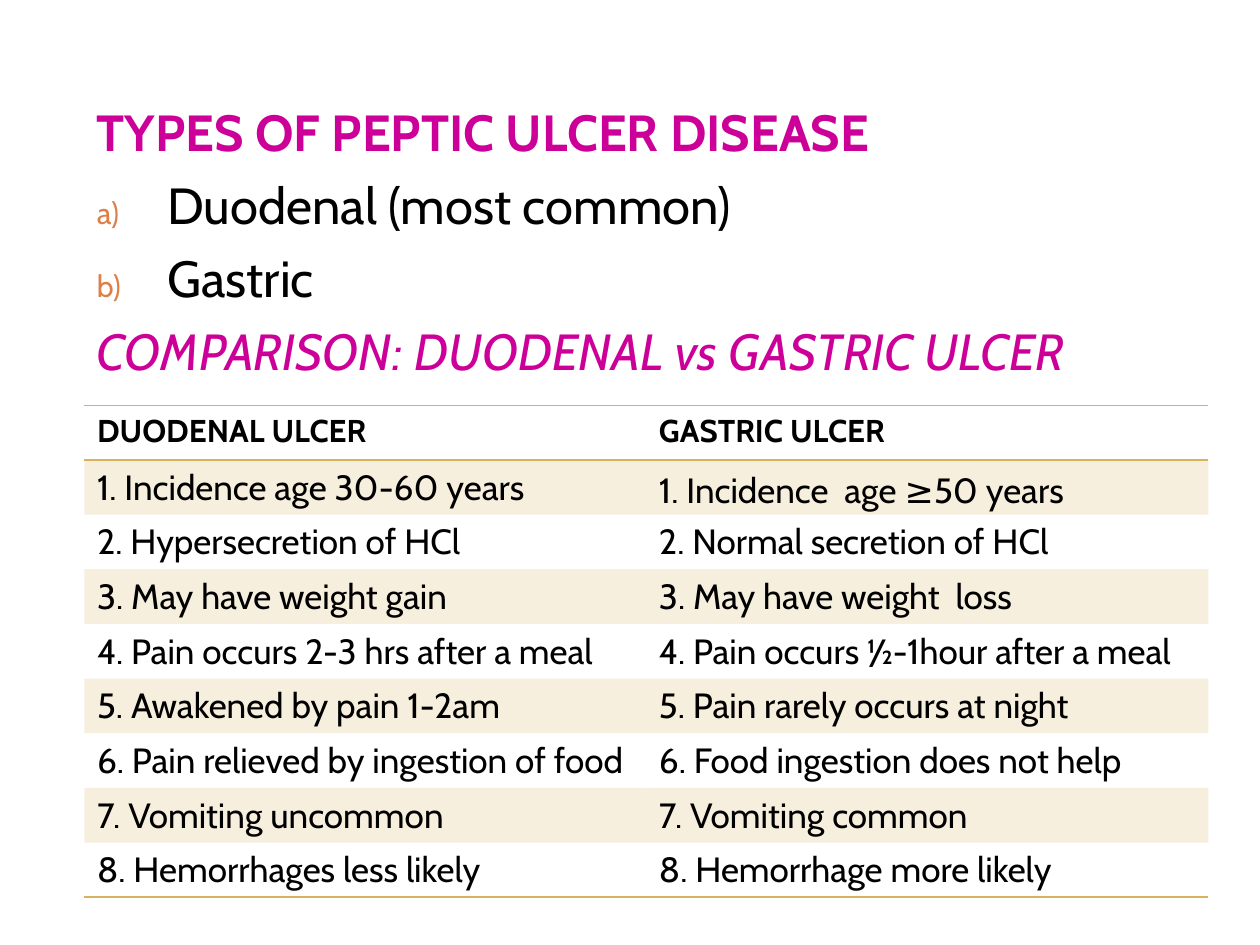
from pptx import Presentation
from pptx.dml.color import RGBColor
from pptx.oxml.ns import qn
from pptx.util import Inches, Pt
from lxml.etree import SubElement

PINK, BLACK, GOLD, RUST = "CC0099", "000000", "D8B25C", "DD8047"
FONT = "Cabin"
LINES = [
    ("TYPES OF PEPTIC ULCER DISEASE", PINK, True, False, False),
    ("Duodenal (most common)", BLACK, False, False, True),
    ("Gastric", BLACK, False, False, True),
    ("COMPARISON: DUODENAL vs GASTRIC ULCER", PINK, False, True, False),
]
ROWS = [
    ("DUODENAL ULCER", "GASTRIC ULCER"),
    ("1. Incidence age 30-60 years", "1. Incidence  age ≥50 years"),
    ("2. Hypersecretion of HCl", "2. Normal secretion of HCl"),
    ("3. May have weight gain", "3. May have weight  loss"),
    ("4. Pain occurs 2-3 hrs after a meal", "4. Pain occurs ½-1hour after a meal"),
    ("5. Awakened by pain 1-2am", "5. Pain rarely occurs at night"),
    ("6. Pain relieved by ingestion of food", "6. Food ingestion does not help"),
    ("7. Vomiting uncommon", "7. Vomiting common"),
    ("8. Hemorrhages less likely", "8. Hemorrhage more likely"),
]
LEFT, WIDTH, ROW = Inches(0.67), Inches(8.92), Inches(0.43)
PLAIN = "{2D5ABB26-0587-4C30-8999-92F81FD0307C}"


def paint(hue):
    return RGBColor.from_string(hue)


def add_run(para, text, size, hue, bold=False, slant=False, face=FONT):
    run = para.add_run()
    run.text = text
    font = run.font
    font.name, font.size, font.bold, font.italic = face, Pt(size), bold, slant
    font.color.rgb = paint(hue)


def letter(para):
    props = para._p.get_or_add_pPr()
    props.set("marL", str(Inches(0.56)))
    props.set("indent", str(-Inches(0.56)))
    SubElement(SubElement(props, qn("a:buClr")), qn("a:srgbClr"), val=RUST)
    SubElement(props, qn("a:buSzPct"), val="60000")
    SubElement(props, qn("a:buFont"), typeface=FONT)
    SubElement(props, qn("a:buAutoNum"), type="alphaLcParenR")


def edge(cell, side):
    line = SubElement(cell._tc.get_or_add_tcPr(), qn("a:" + side), w=str(Pt(1)))
    SubElement(SubElement(line, qn("a:solidFill")), qn("a:srgbClr"), val=GOLD)


def tint(cell):
    cell.fill.solid()
    cell.fill.fore_color.rgb = paint(GOLD)
    hue = cell._tc.tcPr.find(".//" + qn("a:srgbClr"))
    SubElement(hue, qn("a:alpha"), val="20000")


def add_list(slide):
    frame = slide.shapes.add_textbox(LEFT, Inches(0.75), WIDTH, Inches(2.45)).text_frame
    frame.word_wrap = True
    for i, (text, hue, bold, slant, item) in enumerate(LINES):
        para = frame.add_paragraph() if i else frame.paragraphs[0]
        para.space_before = Pt(7)
        if item:
            letter(para)
        add_run(para, text, 29, hue, bold, slant)


def add_grid(slide):
    count = len(ROWS)
    frame = slide.shapes.add_table(count, 2, LEFT, Inches(3.22), WIDTH, ROW * count)
    table = frame.table
    table._tbl.tblPr.find(qn("a:tableStyleId")).text = PLAIN
    for r, texts in enumerate(ROWS):
        table.rows[r].height = ROW
        for c, text in enumerate(texts):
            cell = table.cell(r, c)
            head = r == 0
            if head:
                edge(cell, "lnT")
            if head or r == count - 1:
                edge(cell, "lnB")
            if r % 2:
                tint(cell)
            else:
                cell.fill.background()
            para = cell.text_frame.paragraphs[0]
            start, sign, rest = text.partition("≥")
            for part, face in ((start, FONT), (sign, "Noto Sans"), (rest, FONT)):
                if part:
                    add_run(para, part, 18 if head else 20, BLACK, head, face=face)


def main():
    deck = Presentation()
    deck.slide_width, deck.slide_height = Inches(10), Inches(7.5)
    slide = deck.slides.add_slide(deck.slide_layouts[6])
    add_list(slide)
    add_grid(slide)
    deck.save("out.pptx")


if __name__ == "__main__":
    main()
